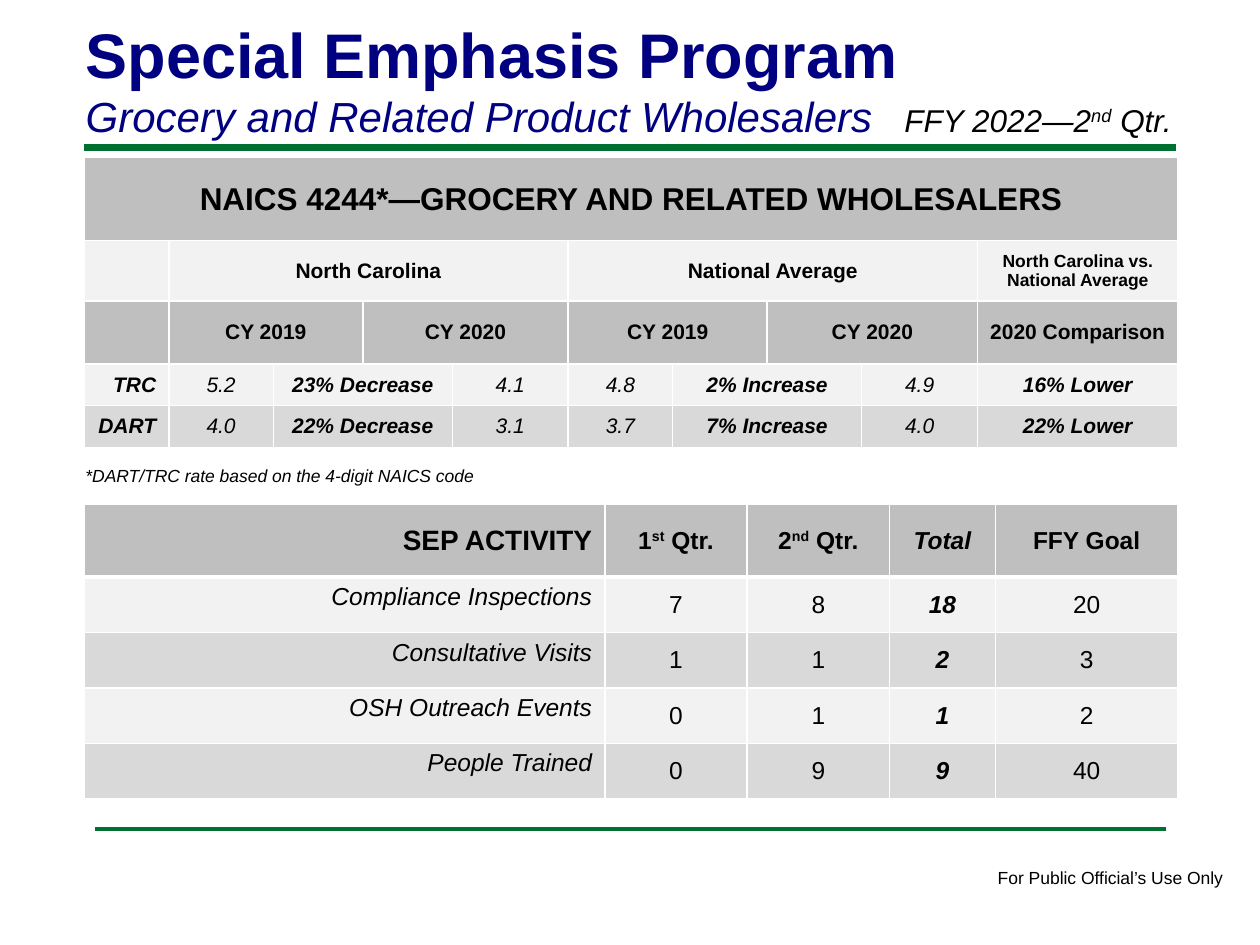
from lxml import etree
from pptx import Presentation
from pptx.dml.color import RGBColor
from pptx.enum.shapes import MSO_CONNECTOR
from pptx.enum.text import MSO_ANCHOR as ANCHOR, PP_ALIGN as ALIGN
from pptx.oxml import parse_xml
from pptx.oxml.ns import nsdecls, qn
from pptx.util import Inches, Pt

rgb = RGBColor.from_string
BLACK, NAVY, GREEN = "000000", "000080", "007030"
DARK, MID, LIGHT = "BFBFBF", "D9D9D9", "F2F2F2"


def write(p, text, size, bold=False, italic=False, color=BLACK, align=ALIGN.LEFT):
    """Fill a paragraph; parts between ^ marks are superscript."""
    p.alignment = align
    for i, part in enumerate(text.split("^")):
        r = p.add_run()
        r.text = part
        r.font.name, r.font.size = "Arial", Pt(size)
        r.font.bold, r.font.italic = bold, italic
        r.font.color.rgb = rgb(color)
        if i % 2:
            r._r.get_or_add_rPr().set("baseline", "30000")


def style_cell(cell, fill, bottom=1):
    """Set the fill and white borders; bottom is the lower border in points."""
    cell.vertical_anchor = ANCHOR.MIDDLE
    cell.fill.solid()
    cell.fill.fore_color.rgb = rgb(fill)
    for i, (side, width) in enumerate(zip("LRTB", (1, 1, 1, bottom))):
        cell._tc.get_or_add_tcPr().insert(i, parse_xml(
            f'<a:ln{side} {nsdecls("a")} w="{Pt(width)}"><a:solidFill>'
            f'<a:srgbClr val="FFFFFF"/></a:solidFill></a:ln{side}>'))


prs = Presentation()
prs.slide_width, prs.slide_height = Inches(10), Inches(7.5)
s = prs.slides.add_slide(prs.slide_layouts[5])

# Green rules
for left, right, y, width in ((0.67, 9.33, 1.17, 4), (0.75, 9.25, 6.58, 2)):
    line = s.shapes.add_connector(MSO_CONNECTOR.STRAIGHT, Inches(left), Inches(y),
                                  Inches(right), Inches(y))
    line.line.color.rgb = rgb(GREEN)
    line.line.width = Pt(width)
    etree.SubElement(line._element.spPr, qn("a:effectLst"))

# Title with its subtitle line
title = s.shapes.title
title.left, title.top = Inches(0.58), Inches(0.06)
title.width, title.height = Inches(8.25), Inches(1.11)
tf = title.text_frame
tf.vertical_anchor = ANCHOR.BOTTOM
write(tf.paragraphs[0], "Special Emphasis Program", 36, bold=True, color=NAVY)
write(tf.add_paragraph(), "Grocery and Related Product Wholesalers", 24,
      italic=True, color=NAVY)

# Period, table footnote and footer
for text, size, italic, wrap, box in (
    ("FFY 2022—2^nd^ Qtr.", 18, True, True, (7.08, 0.75, 2.5, 0.4)),
    ("*DART/TRC rate based on the 4-digit NAICS code", 10, True, True,
     (0.58, 3.64, 3.37, 0.27)),
    ("For Public Official’s Use Only", 10, False, False, (7.82, 6.83, 2.01, 0.27)),
):
    tf = s.shapes.add_textbox(*map(Inches, box)).text_frame
    tf.word_wrap = wrap
    write(tf.paragraphs[0], text, size, italic=italic)

# Injury rates: each row is fill, text size, and (text, columns spanned)
rate_widths = [0.67, 0.83, 0.71, 0.71, 0.92, 0.83, 0.75, 0.75, 0.92, 1.59]
rate_heights = [0.66, 0.48, 0.5, 0.33, 0.33]
rate_rows = [
    (DARK, 18, [("NAICS 4244*—GROCERY AND RELATED WHOLESALERS", 10)]),
    (LIGHT, 12, [("", 1), ("North Carolina", 4), ("National Average", 4),
                 ("North Carolina vs. National Average", 1)]),
    (DARK, 12, [("", 1), ("CY 2019", 2), ("CY 2020", 2), ("CY 2019", 2),
                ("CY 2020", 2), ("2020 Comparison", 1)]),
    (LIGHT, 12, [("TRC", 1), ("5.2", 1), ("23% Decrease", 2), ("4.1", 1),
                 ("4.8", 1), ("2% Increase", 2), ("4.9", 1), ("16% Lower", 1)]),
    (MID, 12, [("DART", 1), ("4.0", 1), ("22% Decrease", 2), ("3.1", 1),
               ("3.7", 1), ("7% Increase", 2), ("4.0", 1), ("22% Lower", 1)]),
]

# Program activity
activity_widths = [4.13, 1.13, 1.13, 0.84, 1.45]
activity_heights = [0.58] + [0.44] * 4
activity_rows = [
    ("SEP ACTIVITY", "1^st^ Qtr.", "2^nd^ Qtr.", "Total", "FFY Goal"),
    ("Compliance Inspections", "7", "8", "18", "20"),
    ("Consultative Visits", "1", "1", "2", "3"),
    ("OSH Outreach Events", "0", "1", "1", "2"),
    ("People Trained", "0", "9", "9", "40"),
]

tables = []
for top, widths, heights in ((1.25, rate_widths, rate_heights),
                             (4, activity_widths, activity_heights)):
    table = s.shapes.add_table(len(heights), len(widths), Inches(0.67), Inches(top),
                               Inches(sum(widths)), Inches(sum(heights))).table
    table.horz_banding = False
    for col, width in zip(table.columns, widths):
        col.width = Inches(width)
    for row, height in zip(table.rows, heights):
        row.height = Inches(height)
    tables.append(table)
rates, activity = tables
rates.first_row = False

for i, (fill, size, entries) in enumerate(rate_rows):
    for cell in rates.rows[i].cells:
        style_cell(cell, fill)
    col = 0
    for text, span in entries:
        cell = rates.cell(i, col)
        if span > 1:
            cell.merge(rates.cell(i, col + span - 1))
        is_data = i >= 3
        if text:
            write(cell.text_frame.paragraphs[0], text,
                  10 if "vs." in text else size,
                  bold=not (is_data and col in (1, 4, 5, 8)), italic=is_data,
                  align=ALIGN.RIGHT if is_data and col == 0 else ALIGN.CENTER)
        col += span

for i, entries in enumerate(activity_rows):
    header = i == 0
    for j, text in enumerate(entries):
        cell = activity.cell(i, j)
        style_cell(cell, DARK if header else (MID, LIGHT)[i % 2], 3 if header else 1)
        if j == 0 and not header:
            cell.vertical_anchor = ANCHOR.TOP
        write(cell.text_frame.paragraphs[0], text, 16 if header and j == 0 else 14,
              bold=header or j == 3, italic=j == 3 or (j == 0 and not header),
              align=ALIGN.CENTER if j else ALIGN.RIGHT)

prs.save("out.pptx")
